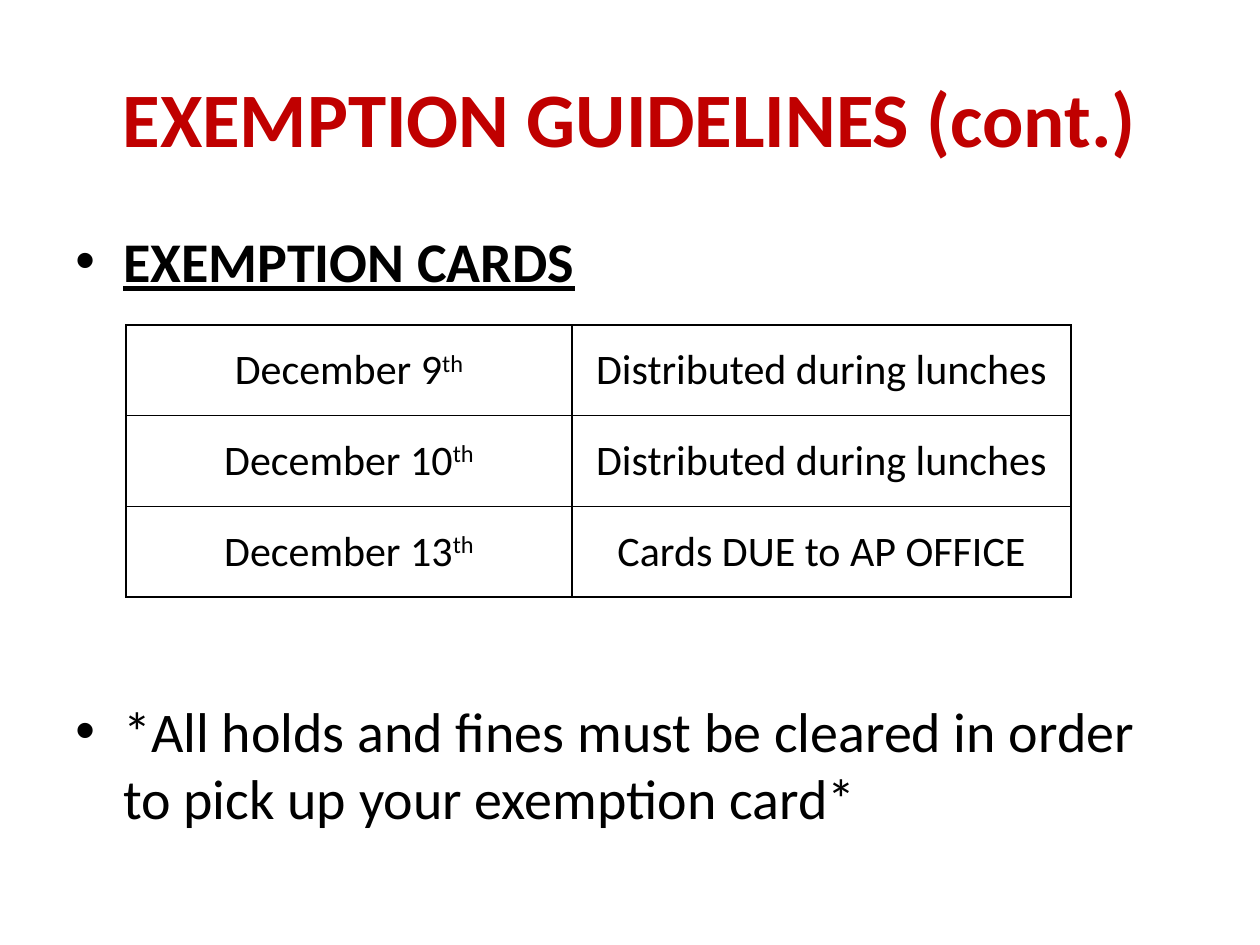
"""Build the exemption guidelines slide with its card schedule."""
from lxml import etree
from pptx import Presentation, util as u
from pptx.dml.color import RGBColor
from pptx.enum import text
from pptx.oxml.ns import qn

RED = RGBColor(0xC0, 0x00, 0x00)
BLACK = RGBColor(0x00, 0x00, 0x00)
FONT = "Calibri"


def style_run(run, size, color=BLACK, bold=False, underline=False):
    run.font.name = FONT
    run.font.size = u.Pt(size)
    run.font.color.rgb = color
    run.font.bold = bold
    run.font.underline = underline


def add_borders(cell):
    properties = cell._tc.get_or_add_tcPr()
    for position, side in enumerate(("lnL", "lnR", "lnT", "lnB")):
        line = etree.Element(qn(f"a:{side}"), w=str(u.Pt(1)))
        fill = etree.SubElement(line, qn("a:solidFill"))
        etree.SubElement(fill, qn("a:srgbClr"), val=str(BLACK))
        properties.insert(position, line)


prs = Presentation()
prs.slide_width, prs.slide_height = u.Inches(10), u.Inches(7.5)
slide = prs.slides.add_slide(prs.slide_layouts[5])

title = slide.shapes.title
title.left, title.top = u.Inches(0.5), u.Inches(0.3)
title.width, title.height = u.Inches(9), u.Inches(1.25)
title.text_frame.text = "EXEMPTION GUIDELINES (cont.)"
title.text_frame.vertical_anchor = text.MSO_ANCHOR.MIDDLE
title.text_frame.paragraphs[0].alignment = text.PP_ALIGN.CENTER
style_run(title.text_frame.paragraphs[0].runs[0], 44, RED, bold=True)

guidelines = slide.shapes.add_textbox(
    u.Inches(0.5), u.Inches(1.75), u.Inches(9), u.Inches(4.95)).text_frame
guidelines.word_wrap = True
guidelines.text = (
    "EXEMPTION CARDS\n"
    "*All holds and fines must be cleared in order to pick up your exemption card*")
heading, reminder = guidelines.paragraphs
reminder.space_before = u.Pt(230)
for guideline in (heading, reminder):
    is_heading = guideline is heading
    style_run(guideline.runs[0], 32, bold=is_heading, underline=is_heading)
    properties = guideline._p.get_or_add_pPr()
    properties.set("marL", str(u.Inches(0.38)))
    properties.set("indent", str(u.Inches(-0.38)))
    etree.SubElement(properties, qn("a:buFont"), typeface="Arial")
    etree.SubElement(properties, qn("a:buChar"), char="•")

dates = [
    ("December 9", "Distributed during lunches"),
    ("December 10", "Distributed during lunches"),
    ("December 13", "Cards DUE to AP OFFICE"),
]
schedule = slide.shapes.add_table(
    len(dates), 2, u.Inches(1), u.Inches(2.58), u.Inches(7.5), u.Inches(2.16)).table
schedule.first_row = schedule.horz_banding = False
for column, width in zip(schedule.columns, (3.54, 3.96)):
    column.width = u.Inches(width)

for row, entries in enumerate(dates):
    for col, entry in enumerate(entries):
        cell = schedule.cell(row, col)
        cell.text_frame.text = entry
        cell.vertical_anchor = text.MSO_ANCHOR.MIDDLE
        cell.fill.background()
        add_borders(cell)
        paragraph = cell.text_frame.paragraphs[0]
        paragraph.alignment = text.PP_ALIGN.CENTER
        if col == 0:
            ordinal = paragraph.add_run()
            ordinal.text = "th"
            ordinal._r.get_or_add_rPr().set("baseline", "30000")
        for run in paragraph.runs:
            style_run(run, 24)

prs.save("out.pptx")
